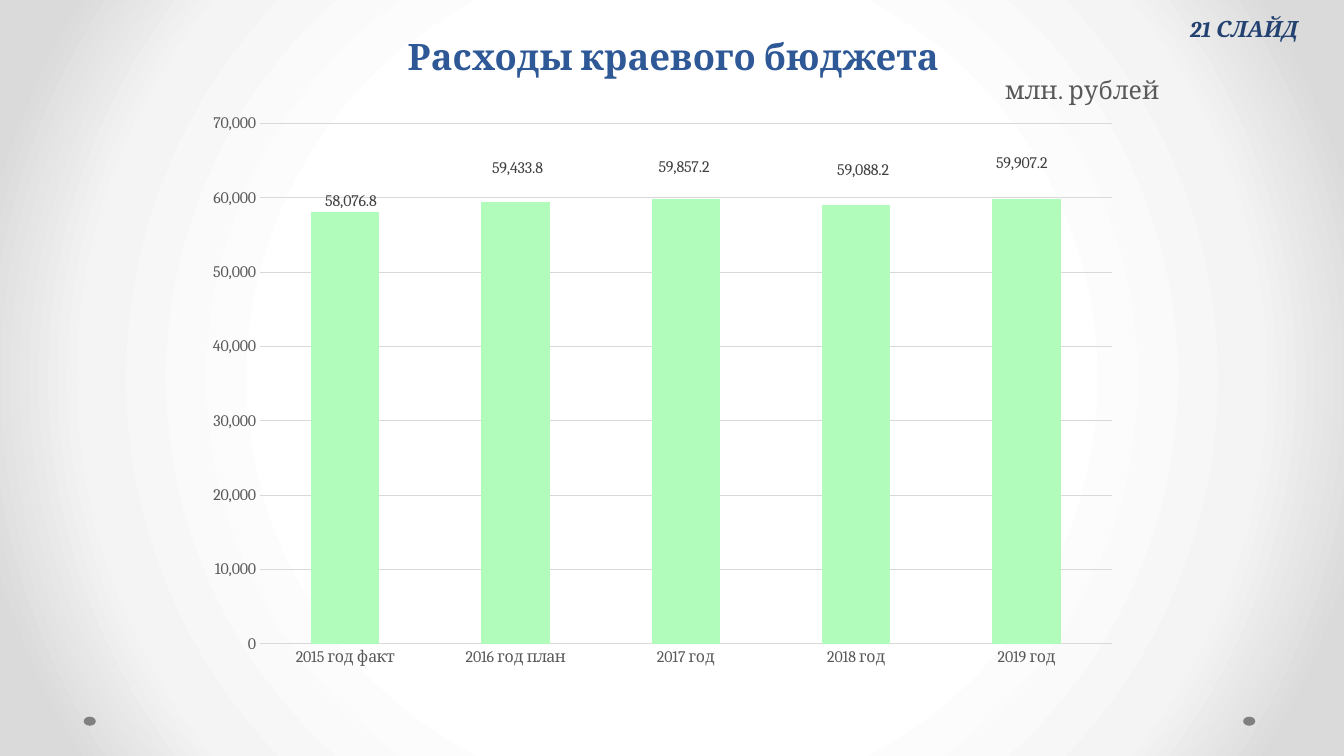
import pptx
import pptx.chart.data
import pptx.dml.color
import pptx.enum.chart
import pptx.enum.shapes
import pptx.enum.text
import pptx.oxml
import pptx.oxml.ns
import pptx.util

Inches = pptx.util.Inches
COLORS = {
    "title": "2F5897", "tag": "234271", "dot": "808080", "bar": "B2FCBB",
    "grid": "D9D9D9", "axis": "595959", "label": "404040",
}
BACKDROP = [(50, "FFFFFF"), (76, "F4F4F4"), (92, "DADADA")]
SPENDING = [
    ("2015 год факт", 58076.8, 0.006, -0.33),
    ("2016 год план", 59433.8, 0.002, -0.37),
    ("2017 год", 59857.2, -0.002, -0.37),
    ("2018 год", 59088.2, 0.007, -0.37),
    ("2019 год", 59907.2, -0.005, -0.375),
]


def rgb(name):
    return pptx.dml.color.RGBColor.from_string(COLORS[name])


def chart_xml(body):
    return pptx.oxml.parse_xml(body.replace(">", f" {pptx.oxml.ns.nsdecls('c')}>", 1))


def manual_layout(x, y, modes="", size=""):
    return chart_xml(
        f'<c:layout><c:manualLayout>{modes}<c:x val="{x}"/><c:y val="{y}"/>'
        f"{size}</c:manualLayout></c:layout>"
    )


class BudgetPage:
    font_name = "Cambria"
    chart_size = 11.5
    edge_modes = '<c:xMode val="edge"/><c:yMode val="edge"/>'

    def __init__(self, deck):
        self.page = deck.slides.add_slide(deck.slide_layouts[5])

    def style(self, font, size, color, bold=False, italic=False):
        font.name = self.font_name
        font.size = pptx.util.Pt(size)
        font.bold = bold
        font.italic = italic
        font.color.rgb = rgb(color)

    def backdrop(self):
        stops = "".join(
            f'<a:gs pos="{place * 1000}"><a:srgbClr val="{color}"/></a:gs>'
            for place, color in BACKDROP
        )
        self.page.element.cSld.insert(0, pptx.oxml.parse_xml(
            f'<p:bg {pptx.oxml.ns.nsdecls("p", "a")}><p:bgPr><a:gradFill><a:gsLst>{stops}</a:gsLst>'
            '<a:path path="circle"><a:fillToRect l="50000" t="50000" r="50000" b="50000"/></a:path>'
            "</a:gradFill><a:effectLst/></p:bgPr></p:bg>"
        ))

    def dot(self, left, top):
        dot = self.page.shapes.add_shape(
            pptx.enum.shapes.MSO_SHAPE.OVAL, Inches(left), Inches(top), Inches(0.12), Inches(0.09))
        dot.shadow.inherit = False
        dot.fill.solid()
        dot.fill.fore_color.rgb = rgb("dot")
        dot.line.fill.background()

    def title(self, text, left, top, width, height):
        box = self.page.shapes.title
        box.left, box.top, box.width, box.height = map(Inches, (left, top, width, height))
        frame = box.text_frame
        frame.text = text
        frame.auto_size = pptx.enum.text.MSO_AUTO_SIZE.NONE
        frame.vertical_anchor = pptx.enum.text.MSO_ANCHOR.TOP
        frame.margin_top = 0
        para = frame.paragraphs[0]
        para.alignment = pptx.enum.text.PP_ALIGN.CENTER
        self.style(para.font, 26, "title", bold=True)

    def tag(self, text, left, top, width, height):
        box = self.page.shapes.add_textbox(*map(Inches, (left, top, width, height)))
        frame = box.text_frame
        frame.text = text
        frame.word_wrap = False
        para = frame.paragraphs[0]
        para.alignment = pptx.enum.text.PP_ALIGN.RIGHT
        self.style(para.font, 16, "tag", bold=True, italic=True)

    def axis(self, axis):
        axis.major_tick_mark = pptx.enum.chart.XL_TICK_MARK.NONE
        axis.format.line.fill.background()
        self.style(axis.tick_labels.font, self.chart_size, "axis")

    def column_chart(self, heading, left, top, width, height):
        data = pptx.chart.data.CategoryChartData(number_format="#,##0.0")
        data.categories = [row[0] for row in SPENDING]
        data.add_series("Series 1", [row[1] for row in SPENDING])
        chart = self.page.shapes.add_chart(
            pptx.enum.chart.XL_CHART_TYPE.COLUMN_STACKED,
            *map(Inches, (left, top, width, height)), data).chart
        chart.has_legend = False
        self.style(chart.font, 10, "label")

        chart.chart_title.text_frame.text = heading
        self.style(chart.chart_title.text_frame.paragraphs[0].font, 18, "axis")
        chart.chart_title.include_in_layout = False
        for old in chart.element.xpath("c:chart/c:title/c:layout | c:chart/c:plotArea/c:layout"):
            old.getparent().remove(old)
        chart.element.xpath("c:chart/c:title/c:tx")[0].addnext(
            manual_layout(0.846, 0, self.edge_modes))
        chart.element.xpath("c:chart/c:plotArea")[0].insert(0, manual_layout(
            0.093, 0.08, '<c:layoutTarget val="inner"/>' + self.edge_modes,
            '<c:w val="0.866"/><c:h val="0.757"/>'))

        self.axis(chart.category_axis)
        values = chart.value_axis
        self.axis(values)
        values.minimum_scale, values.maximum_scale, values.major_unit = 0, 70000, 10000
        values.tick_labels.number_format = "#,##0"
        values.tick_labels.number_format_is_linked = False
        values.major_gridlines.format.line.color.rgb = rgb("grid")
        values.major_gridlines.format.line.width = pptx.util.Pt(0.75)

        plot = chart.plots[0]
        plot.gap_width, plot.overlap, plot.vary_by_categories = 150, 100, False
        bars = plot.series[0]
        bars.format.fill.solid()
        bars.format.fill.fore_color.rgb = rgb("bar")
        labels = bars.data_labels
        labels.show_value = True
        labels.number_format = "#,##0.0"
        labels.number_format_is_linked = False
        self.style(labels.font, self.chart_size, "label")
        for index, (_, _, shift_x, shift_y) in enumerate(SPENDING):
            self.style(bars.points[index].data_label.font, self.chart_size, "label")
            label = chart.element.xpath(f".//c:dLbl[c:idx/@val='{index}']")[0]
            label.insert(1, manual_layout(shift_x, shift_y))
            label.insert(2, chart_xml(
                '<c:numFmt formatCode="#,##0.0" sourceLinked="0"></c:numFmt>'))
        for leader in chart.element.xpath(".//c:showLeaderLines"):
            leader.set("val", "0")


def main():
    deck = pptx.Presentation()
    deck.slide_width, deck.slide_height = Inches(13.33), Inches(7.5)
    budget = BudgetPage(deck)
    budget.backdrop()
    for left in (0.83, 12.33):
        budget.dot(left, 7.11)
    budget.title("Расходы краевого бюджета", 2.18, 0.34, 9, 1.26)
    budget.column_chart("млн. рублей", 1.67, 0.68, 9.88, 6.82)
    budget.tag("21 СЛАЙД", 11.5, 0.1, 1.47, 0.37)
    deck.save("out.pptx")


if __name__ == "__main__":
    main()
